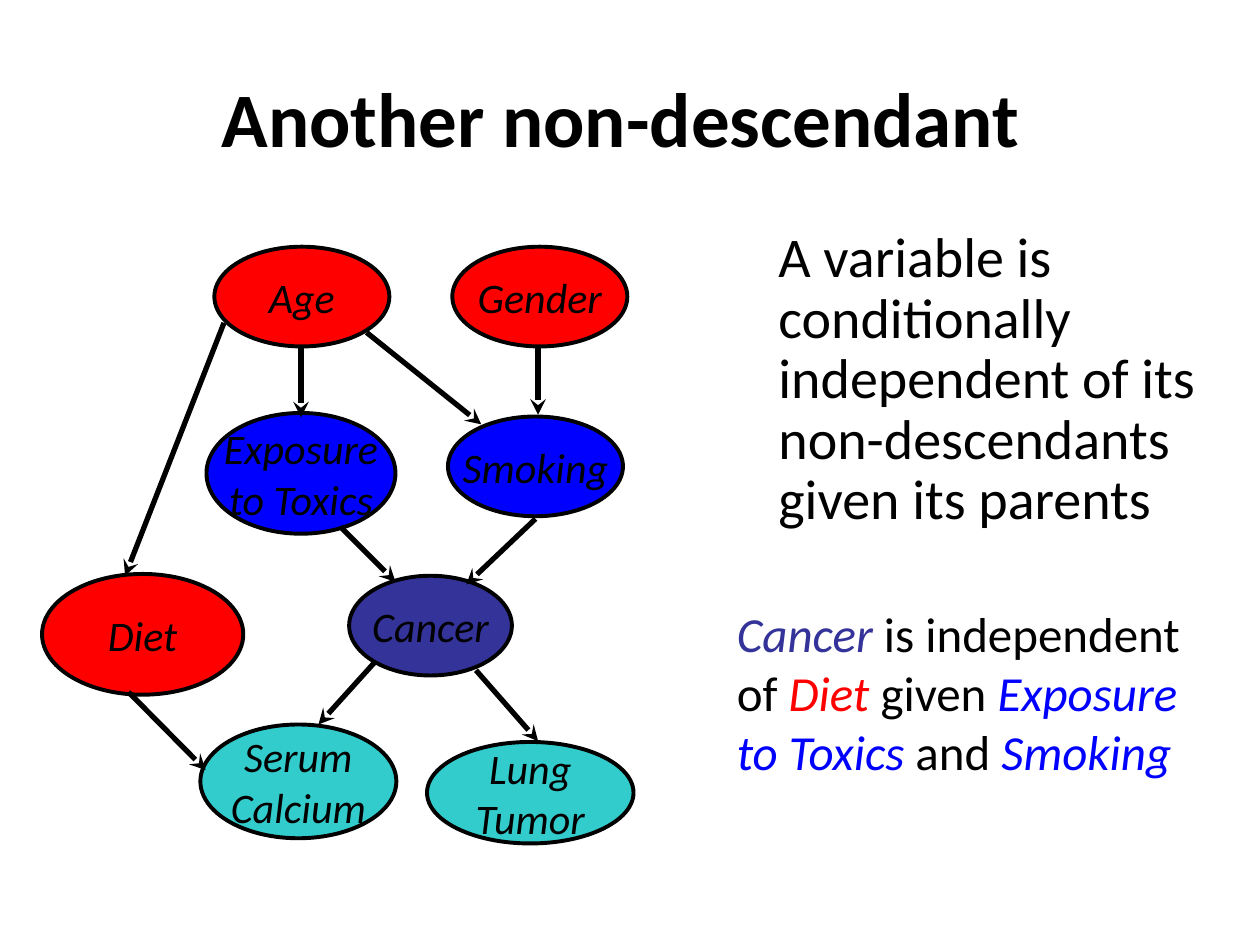
from lxml import etree
from pptx import Presentation
from pptx.dml.color import RGBColor
from pptx.enum import shapes, text
from pptx.oxml import ns
from pptx.util import Pt

BLACK = RGBColor(0x00, 0x00, 0x00)
RED = RGBColor(0xFF, 0x00, 0x00)
BLUE = RGBColor(0x00, 0x00, 0xFF)
INDIGO = RGBColor(0x33, 0x33, 0x99)
TEAL = RGBColor(0x33, 0xCC, 0xCC)

NODES = [
    ("Diet", RED, (0, 187, 115, 69)),
    ("Smoking", BLUE, (232, 97, 100, 57)),
    ("Gender", RED, (234.5, 0, 100, 57)),
    ("Age", RED, (98.5, 0, 100, 57)),
    ("Cancer", INDIGO, (175.5, 188, 93, 57)),
    ("Lung\nTumor", TEAL, (220, 283, 118, 58)),
    ("Serum\nCalcium", TEAL, (90.5, 273, 112, 65)),
    ("Exposure\nto Toxics", BLUE, (94, 95, 108, 69)),
]
ARROWS = [
    ((283.5, 57.5), (283.5, 96)),
    ((185.5, 49), (251, 101.5)),
    ((282, 155.5), (242.5, 193)),
    ((248, 242), (283.5, 282.5)),
    ((190.5, 237), (158, 273)),
    ((170.5, 160), (202, 191.5)),
    ((148, 56.5), (148, 97.5)),
    ((104, 43.5), (47.5, 188)),
    ((49.5, 254.5), (93.5, 299)),
]
EXAMPLE = [
    ("Cancer", INDIGO), (" is independent of ", BLACK), ("Diet ", RED),
    ("given ", BLACK), ("Exposure to Toxics", BLUE), (" and ", BLACK),
    ("Smoking", BLUE),
]


def set_format(target, values):
    """Set each named attribute of the target."""
    for name, value in values.items():
        setattr(target, name, value)


def add_run(paragraph, wording, size, color=BLACK, **style):
    """Append a formatted run to a paragraph."""
    run = paragraph.add_run()
    run.text = wording
    set_format(run.font, {"name": "Calibri", "size": Pt(size), **style})
    run.font.color.rgb = color


def place_title(slide, box):
    """Move the title placeholder to the box and fill it."""
    title = slide.shapes.title
    set_format(title, dict(zip(("left", "top", "width", "height"), map(Pt, box))))
    title.text_frame.vertical_anchor = text.MSO_ANCHOR.MIDDLE
    paragraph = title.text_frame.paragraphs[0]
    paragraph.alignment = text.PP_ALIGN.CENTER
    add_run(paragraph, "Another non-descendant ", 44, bold=True)


def add_node(slide, label, color, box):
    """Draw one labelled variable of the network."""
    node = slide.shapes.add_shape(shapes.MSO_SHAPE.OVAL, *map(Pt, box))
    node.shadow.inherit = False
    node.fill.solid()
    node.fill.fore_color.rgb = color
    node.line.color.rgb = BLACK
    node.line.width = Pt(2.25)
    frame = node.text_frame
    set_format(frame, {"word_wrap": False, "vertical_anchor": text.MSO_ANCHOR.MIDDLE})
    for index, wording in enumerate(label.split("\n")):
        paragraph = frame.add_paragraph() if index else frame.paragraphs[0]
        paragraph.alignment = text.PP_ALIGN.CENTER
        add_run(paragraph, wording, 24, italic=True)


def add_arrow(slide, start, end):
    """Draw a straight arrow with a stealth head."""
    arrow = slide.shapes.add_connector(
        shapes.MSO_CONNECTOR.STRAIGHT, *map(Pt, start + end))
    arrow.line.color.rgb = BLACK
    arrow.line.width = Pt(3)
    etree.SubElement(arrow.line._get_or_add_ln(), ns.qn("a:tailEnd"), type="stealth")
    etree.SubElement(arrow._element.spPr, ns.qn("a:effectLst"))


def place_network(slide, left, top):
    """Draw the network of variables from its top left corner."""
    for label, color, (x, y, width, height) in NODES:
        add_node(slide, label, color, (left + x, top + y, width, height))
    for ends in ARROWS:
        add_arrow(slide, *((left + x, top + y) for x, y in ends))


def add_text_box(slide, box):
    """Add a wrapping text box and return its first paragraph."""
    frame = slide.shapes.add_textbox(*map(Pt, box)).text_frame
    set_format(frame, {"word_wrap": True,
                       "auto_size": text.MSO_AUTO_SIZE.SHAPE_TO_FIT_TEXT})
    return frame.paragraphs[0]


def place_rule(slide, box):
    """Write the independence rule in the box."""
    paragraph = add_text_box(slide, box)
    paragraph.line_spacing = 0.9
    add_run(paragraph, "A variable is conditionally independent of its "
                       "non-descendants given its parents", 32)


def place_example(slide, box):
    """Write the example with variables in their node colours."""
    paragraph = add_text_box(slide, box)
    for wording, color in EXAMPLE:
        add_run(paragraph, wording, 28, color, italic=color != BLACK)


def main():
    """Build and save the slide."""
    presentation = Presentation()
    set_format(presentation, {"slide_width": Pt(720), "slide_height": Pt(540)})
    slide = presentation.slides.add_slide(presentation.slide_layouts[5])
    place_title(slide, (36, 21.6, 648, 90))
    place_network(slide, 24, 141)
    place_rule(slide, (437.75, 127.5, 258, 182))
    place_example(slide, (414, 341.25, 283, 108.75))
    presentation.save("out.pptx")


if __name__ == "__main__":
    main()
